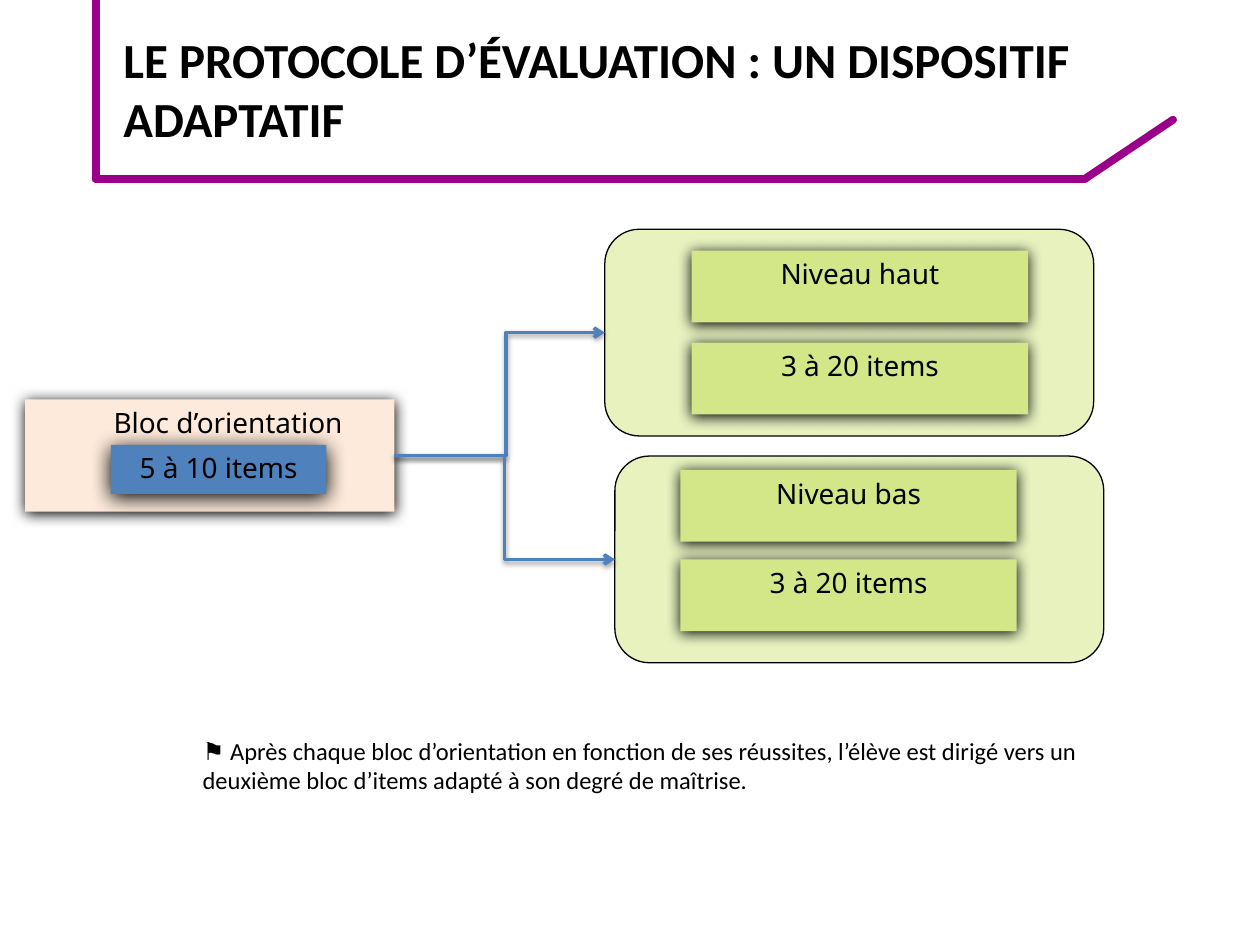
import dataclasses
import itertools

import pptx
import pptx.dml.color
import pptx.enum.shapes
import pptx.enum.text
import pptx.oxml.ns
import pptx.util
from lxml import etree

SHAPES = pptx.enum.shapes.MSO_SHAPE
CONNECTORS = pptx.enum.shapes.MSO_CONNECTOR
ALIGN = pptx.enum.text.PP_ALIGN
ANCHOR = pptx.enum.text.MSO_ANCHOR
FIT = pptx.enum.text.MSO_AUTO_SIZE
RIGHT_SIDE, LEFT_SIDE = 3, 1


@dataclasses.dataclass(frozen=True)
class Theme:
    ink: str = "000000"
    rail: str = "9B008A"
    peach: str = "FDEADA"
    blue: str = "4F81BD"
    lime: str = "D3E789"
    panel_opacity: int = 54
    text_font: str = "Calibri"
    label_font: str = "Noto Sans"
    title_size: int = 28
    label_size: int = 16
    note_size: int = 14
    box_shadow: tuple = (100, 8.5, 1)
    badge_shadow: tuple = (100, 12, 2)
    arrow_shadow: tuple = (38, 3.1, 1.6)


def color(value):
    return pptx.dml.color.RGBColor.from_string(value)


def child(parent, tag, **attributes):
    values = {name: str(value) for name, value in attributes.items()}
    return etree.SubElement(parent, pptx.oxml.ns.qn(tag), values)


class Board:
    """Draws styled elements on one slide, on a grid of 100 columns by 75 rows."""

    def __init__(self, deck, theme):
        self.theme = theme
        self.cell = deck.slide_width / 100
        self.page = deck.slides.add_slide(deck.slide_layouts[5])

    def grid(self, *cells):
        return [pptx.util.Emu(round(value * self.cell)) for value in cells]

    def add_text(self, frame, text, font, size, align, bold=False):
        para = frame.paragraphs[0]
        para.alignment = align
        span = para.add_run()
        span.text = text
        span.font.name = font
        span.font.size = pptx.util.Pt(size)
        span.font.bold = bold
        span.font.color.rgb = color(self.theme.ink)

    def cast(self, effects, opacity, blur, distance):
        shadow = child(effects, "a:outerShdw", blurRad=pptx.util.Pt(blur),
                       dist=pptx.util.Pt(distance), dir=5400000,
                       algn="ctr", rotWithShape=0)
        tint = child(shadow, "a:srgbClr", val=self.theme.ink)
        child(tint, "a:alpha", val=opacity * 1000)

    def shape(self, kind, area, fill):
        box = self.page.shapes.add_shape(kind, *self.grid(*area))
        box.shadow.inherit = False
        box.fill.solid()
        box.fill.fore_color.rgb = color(fill)
        return box

    def label(self, area, text, fill, shadow=None, indent=0):
        box = self.shape(SHAPES.RECTANGLE, area, fill)
        box.line.fill.background()
        effects = box._element.spPr.find(pptx.oxml.ns.qn("a:effectLst"))
        self.cast(effects, *(shadow or self.theme.box_shadow))
        frame = box.text_frame
        frame.vertical_anchor = ANCHOR.TOP
        frame.margin_left = self.grid(1 + indent)[0]
        self.add_text(frame, text, self.theme.label_font,
                      self.theme.label_size, ALIGN.CENTER)
        return box

    def panel(self, area):
        box = self.shape(SHAPES.ROUNDED_RECTANGLE, area, self.theme.lime)
        box.adjustments[0] = 0.167
        box.line.color.rgb = color(self.theme.ink)
        box.line.width = pptx.util.Pt(0.75)
        tint = box._element.spPr.find(".//" + pptx.oxml.ns.qn("a:srgbClr"))
        child(tint, "a:alpha", val=self.theme.panel_opacity * 1000)
        return box

    def connector(self, kind, start, end, stroke, width):
        line = self.page.shapes.add_connector(kind, *self.grid(*start, *end))
        line.line.color.rgb = color(stroke)
        line.line.width = pptx.util.Pt(width)
        return line, child(line._element.spPr, "a:effectLst")

    def rail(self, points):
        for start, end in itertools.pairwise(points):
            line, _ = self.connector(CONNECTORS.STRAIGHT, start, end,
                                     self.theme.rail, 4.5)
            line._element.spPr.get_or_add_ln().set("cap", "rnd")

    def arrow(self, source, target, bend):
        line, effects = self.connector(CONNECTORS.ELBOW, (0, 0), (1, 1),
                                       self.theme.blue, 2)
        line.begin_connect(source, RIGHT_SIDE)
        line.end_connect(target, LEFT_SIDE)
        child(line._element.spPr.get_or_add_ln(), "a:tailEnd", type="arrow")
        self.cast(effects, *self.theme.arrow_shadow)
        geometry = line._element.spPr.find(pptx.oxml.ns.qn("a:prstGeom"))
        guides = geometry.find(pptx.oxml.ns.qn("a:avLst"))
        child(guides, "a:gd", name="adj1", fmla=f"val {round(bend * 100000)}")

    def title(self, area, text):
        box = self.page.shapes.title
        box.left, box.top, box.width, box.height = self.grid(*area)
        frame = box.text_frame
        frame.word_wrap = True
        frame.auto_size = FIT.NONE
        frame.vertical_anchor = ANCHOR.MIDDLE
        self.add_text(frame, text, self.theme.text_font,
                      self.theme.title_size, ALIGN.LEFT, bold=True)

    def note(self, area, text):
        frame = self.page.shapes.add_textbox(*self.grid(*area)).text_frame
        frame.word_wrap = True
        frame.auto_size = FIT.SHAPE_TO_FIT_TEXT
        self.add_text(frame, text, self.theme.text_font,
                      self.theme.note_size, ALIGN.LEFT)


def main():
    deck = pptx.Presentation()
    deck.slide_width = pptx.util.Inches(10)
    deck.slide_height = pptx.util.Inches(7.5)
    theme = Theme()
    board = Board(deck, theme)

    board.rail([(7.6, 0), (7.6, 14.2), (86.1, 14.2), (93.1, 9.5)])
    board.title((8.8, 1.8, 86.2, 10.4),
                "LE PROTOCOLE D’ÉVALUATION : UN DISPOSITIF ADAPTATIF")

    orientation = board.label((2, 31.7, 29.3, 8.9), "Bloc d’orientation",
                              theme.peach, indent=2.9)
    board.label((8.8, 35.3, 17.1, 3.9), "5 à 10 items", theme.blue,
                theme.badge_shadow)

    levels = [
        ("Niveau haut", (48, 18.2), 54.9, (19.9, 27.2), 0.53),
        ("Niveau bas", (48.8, 36.2), 54, (37.3, 44.4), 0.5),
    ]
    for name, corner, column, rows, bend in levels:
        panel = board.panel((*corner, 38.8, 16.4))
        for text, row in zip((name, "3 à 20 items"), rows):
            board.label((column, row, 26.7, 5.7), text, theme.lime)
        board.arrow(orientation, panel, bend)

    board.note((15.1, 57.9, 78, 5.7),
               "⚑ Après chaque bloc d’orientation en fonction de ses réussites, "
               "l’élève est dirigé vers un deuxième bloc d’items adapté à son "
               "degré de maîtrise.")
    deck.save("out.pptx")


if __name__ == "__main__":
    main()
